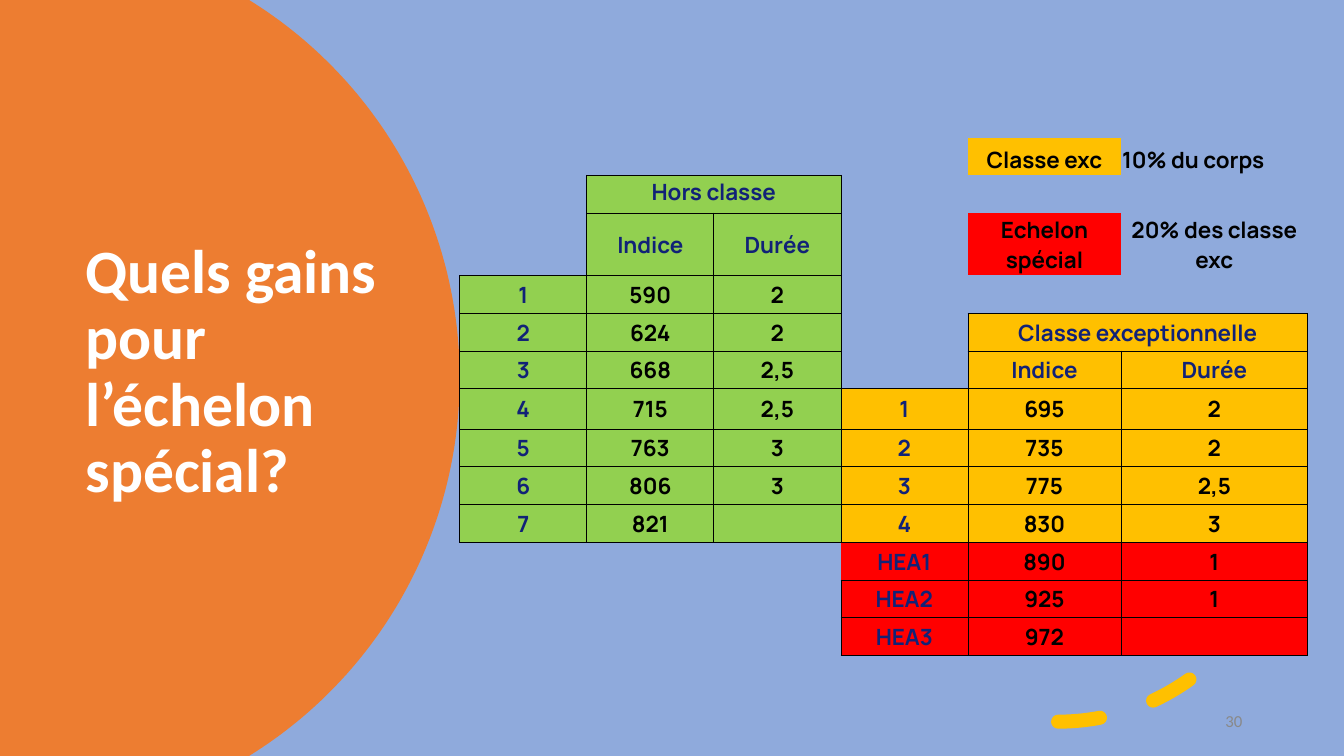
import math

from lxml import etree
from pptx import Presentation
from pptx import util as u
from pptx.dml.color import RGBColor
from pptx.enum import dml, shapes, text
from pptx.oxml.ns import qn

ORANGE, BLUE, WHITE, GREY = "ED7D31", "8FAADC", "FFFFFF", "898989"
GREEN, GOLD, RED, NAVY, BLACK = "92D050", "FFC000", "FF0000", "112277", "000000"
NO_STYLE = "{2D5ABB26-0587-4C30-8999-92F81FD0307C}"
COLUMN_WIDTHS = [1.26, 1.26, 1.26, 1.26, 1.52, 1.85]
SPECIAL_HEIGHTS = {3: 0.62, 7: 0.4}
ROW_COUNT = 15
HORS_CLASSE = [("590", "2"), ("624", "2"), ("668", "2,5"), ("715", "2,5"),
               ("763", "3"), ("806", "3"), ("821", "")]
CLASSE_EXC = [("695", "2"), ("735", "2"), ("775", "2,5"), ("830", "3")]
ECHELON_SPECIAL = [("890", "1"), ("925", "1"), ("972", "")]
LEGEND = {(1, 4): ("Classe exc", GOLD), (1, 5): ("10% du corps", None),
          (3, 4): ("Echelon spécial", RED), (3, 5): ("20% des classe exc", None)}
SIDES = {"lnL": (0, -1), "lnR": (0, 1), "lnT": (-1, 0), "lnB": (1, 0)}
OPEN_EDGE = {(11, 2), (11, 3)}


def rgb(hex_code):
    """Turn a hex string into a colour."""
    return RGBColor.from_string(hex_code)


def apply(target, values):
    """Set each attribute named in a dict."""
    for name, value in values.items():
        setattr(target, name, value)


def write(frame, words, font, size, colour, bold, align, spacing=None):
    """Write one formatted paragraph into a text frame."""
    paragraph = frame.paragraphs[0]
    apply(paragraph, {"alignment": align, "line_spacing": spacing})
    run = paragraph.add_run()
    run.text = words
    apply(run.font, {"name": font, "size": u.Pt(size), "bold": bold})
    run.font.color.rgb = rgb(colour)


def add_label(slide, box, words, size, colour, bold, align, spacing=None):
    """Place a vertically centred text box."""
    frame = slide.shapes.add_textbox(*map(u.Inches, box)).text_frame
    apply(frame, {"word_wrap": True, "vertical_anchor": text.MSO_ANCHOR.MIDDLE})
    write(frame, words, "Calibri", size, colour, bold, align, spacing)


def add_title_panel(slide, left, top, width, height):
    """Draw the rounded orange panel with the title on it."""
    radius = 4.41
    half_angle = math.asin(height / 2 / radius)
    centre_x, centre_y = left + width - radius, top + height / 2
    steps = 120
    angles = [half_angle * (2 * step / steps - 1) for step in range(steps + 1)]
    rim = [(u.Inches(centre_x + radius * math.cos(angle)),
            u.Inches(centre_y + radius * math.sin(angle))) for angle in angles]
    outline = slide.shapes.build_freeform(u.Inches(left), u.Inches(top))
    outline.add_line_segments(rim + [(u.Inches(left), u.Inches(top + height))])
    panel = outline.convert_to_shape()
    panel.shadow.inherit = False
    panel.fill.solid()
    panel.fill.fore_color.rgb = rgb(ORANGE)
    panel.line.fill.background()
    add_label(slide, (left + 0.75, top + 1.26, 3.5, 4.88),
              "Quels gains pour l’échelon spécial?", 44, WHITE, True,
              text.PP_ALIGN.LEFT, 0.9)


def add_dashed_arc(slide, left, top, size):
    """Draw the dashed quarter circle, opening downwards."""
    arc = slide.shapes.add_shape(shapes.MSO_SHAPE.ARC,
                                 *map(u.Inches, (left, top, size, size)))
    arc.shadow.inherit = False
    arc.fill.background()
    arc.line.color.rgb = rgb(GOLD)
    apply(arc.line, {"width": u.Pt(10), "dash_style": dml.MSO_LINE.DASH})
    arc.line._get_or_add_ln().set("cap", "rnd")
    arc._element.spPr.find(qn("a:xfrm")).set("flipV", "1")


def scale_cells():
    """Map each framed cell to its words, fill and text colour."""
    cells = {}
    blocks = [(2, 1, "Hors classe", GREEN), (5, 4, "Classe exceptionnelle", GOLD)]
    for row, column, heading, fill in blocks:
        cells[row, column] = (heading, fill, NAVY)
        cells[row, column + 1] = ("", fill, NAVY)
        cells[row + 1, column] = ("Indice", fill, NAVY)
        cells[row + 1, column + 1] = ("Durée", fill, NAVY)
    steps = [(4, 0, "", HORS_CLASSE, GREEN), (7, 3, "", CLASSE_EXC, GOLD),
             (11, 3, "HEA", ECHELON_SPECIAL, RED)]
    for first_row, column, prefix, values, fill in steps:
        for number, (indice, duree) in enumerate(values, 1):
            row = first_row + number - 1
            cells[row, column] = (f"{prefix}{number}", fill, NAVY)
            cells[row, column + 1] = (indice, fill, BLACK)
            cells[row, column + 2] = (duree, fill, BLACK)
    return cells


def draw_borders(cell, place, framed):
    """Rule the sides that touch a framed cell and clear the others."""
    properties = cell._tc.get_or_add_tcPr()
    for side, (down, across) in SIDES.items():
        neighbour = (place[0] + down, place[1] + across)
        edge = {place, neighbour}
        line = etree.SubElement(properties, qn(f"a:{side}"), w=str(u.Pt(0.5)))
        if edge & framed.keys() and edge != OPEN_EDGE:
            paint = etree.SubElement(line, qn("a:solidFill"))
            etree.SubElement(paint, qn("a:srgbClr"), val=BLACK)
        else:
            etree.SubElement(line, qn("a:noFill"))


def fill_cell(cell, place, words, fill, colour):
    """Give a cell its fill, margins and words."""
    anchors = {1: text.MSO_ANCHOR.BOTTOM, 2: text.MSO_ANCHOR.TOP}
    apply(cell, {"margin_left": u.Inches(0.01), "margin_right": u.Inches(0.01),
                 "margin_top": u.Inches(0.01), "margin_bottom": 0,
                 "vertical_anchor": anchors.get(place[0], text.MSO_ANCHOR.MIDDLE)})
    if fill:
        cell.fill.solid()
        cell.fill.fore_color.rgb = rgb(fill)
    else:
        cell.fill.background()
    if words:
        align = text.PP_ALIGN.LEFT if place == (1, 5) else text.PP_ALIGN.CENTER
        write(cell.text_frame, words, "Manrope", 16, colour, True, align)


def add_scales(slide, left, top, width, height):
    """Build the table of pay scales with its legend."""
    scales = slide.shapes.add_table(ROW_COUNT, len(COLUMN_WIDTHS),
                                    *map(u.Inches, (left, top, width, height))).table
    apply(scales, {"first_row": False, "horz_banding": False})
    scales._tbl.tblPr.find(qn("a:tableStyleId")).text = NO_STYLE
    for column, column_width in zip(scales.columns, COLUMN_WIDTHS):
        column.width = u.Inches(column_width)
    plain_height = ((height - sum(SPECIAL_HEIGHTS.values()))
                    / (ROW_COUNT - len(SPECIAL_HEIGHTS)))
    framed = scale_cells()
    for row in range(ROW_COUNT):
        scales.rows[row].height = u.Inches(SPECIAL_HEIGHTS.get(row, plain_height))
        for column in range(len(COLUMN_WIDTHS)):
            place = (row, column)
            cell = scales.cell(row, column)
            words, fill, colour = framed.get(
                place, (*LEGEND.get(place, ("", None)), BLACK))
            draw_borders(cell, place, framed)
            fill_cell(cell, place, words, fill, colour)
    for row, column in [(2, 1), (5, 4)]:
        scales.cell(row, column).merge(scales.cell(row, column + 1))


def main():
    """Build and save the slide."""
    deck = Presentation()
    apply(deck, {"slide_width": u.Inches(13.33), "slide_height": u.Inches(7.5)})
    slide = deck.slides.add_slide(deck.slide_layouts[6])
    slide.background.fill.solid()
    slide.background.fill.fore_color.rgb = rgb(BLUE)
    add_title_panel(slide, 0, 0, 4.56, 7.5)
    add_dashed_arc(slide, 8.26, 2.69, 4.47)
    add_scales(slide, 4.56, 0.99, 8.43, 5.89)
    add_label(slide, (9.42, 6.95, 3, 0.4), "30", 12, GREY, False,
              text.PP_ALIGN.RIGHT)
    deck.save("out.pptx")


if __name__ == "__main__":
    main()
